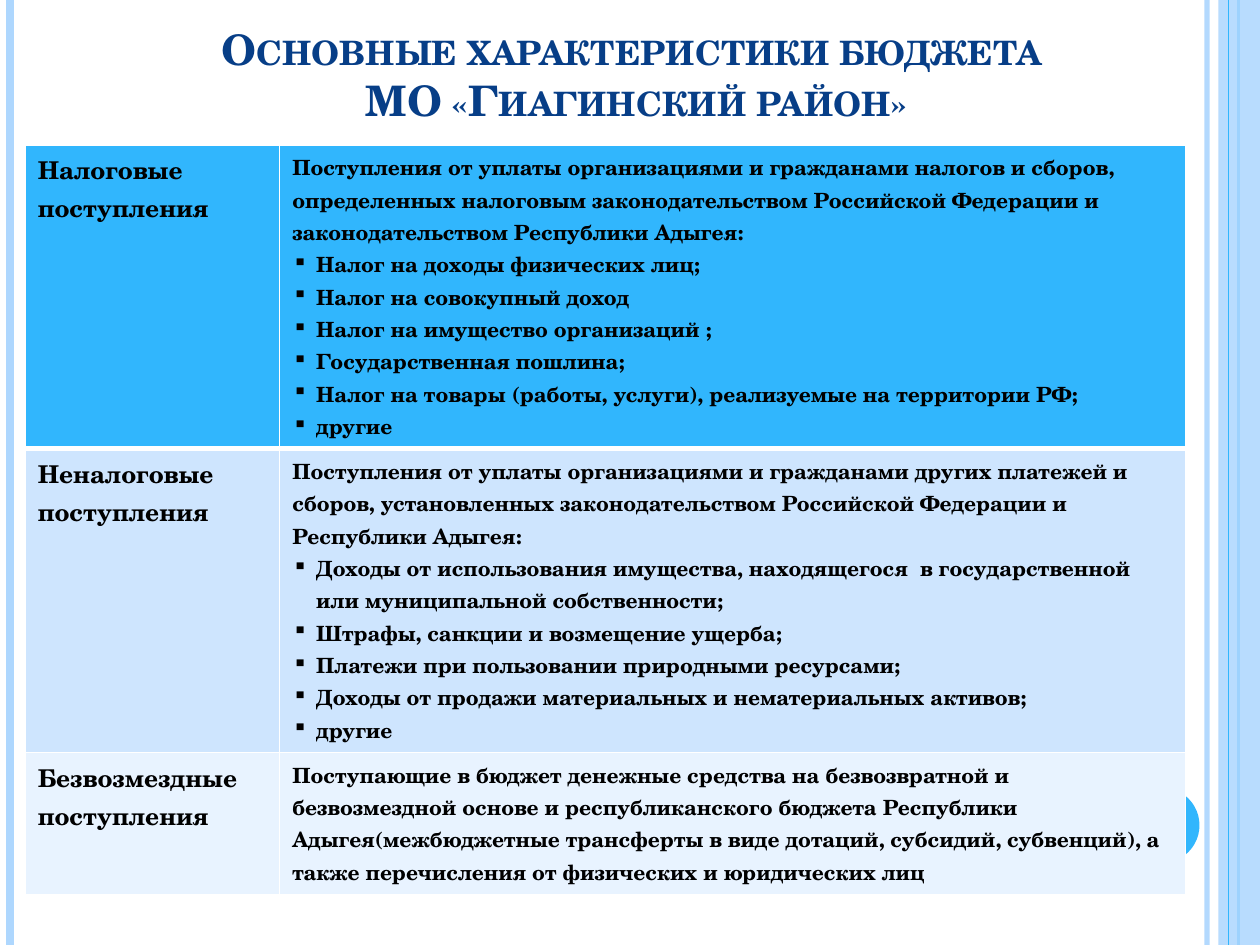
import dataclasses

import lxml.etree
import pptx
import pptx.dml.color
import pptx.enum.shapes
import pptx.enum.text
import pptx.oxml.ns
import pptx.util

Inches = pptx.util.Inches
qn = pptx.oxml.ns.qn


@dataclasses.dataclass(frozen=True)
class Theme:
    font: str = "TeX Gyre Schola"
    title_size: int = 24
    label_size: int = 14
    body_size: int = 12
    title: str = "073E87"
    text: str = "000000"
    border: str = "FFFFFF"
    stripe: str = "AED7FE"
    accent: str = "31B6FD"
    middle_row: str = "CEE5FE"
    last_row: str = "E8F3FF"


def rgb(value):
    return pptx.dml.color.RGBColor.from_string(value)


def set_opacity(properties, percent):
    for colour in properties.iter(qn("a:srgbClr")):
        lxml.etree.SubElement(colour, qn("a:alpha"), val=str(percent * 1000))


class SlideBuilder:
    def __init__(self, slide, theme):
        self.slide = slide
        self.theme = theme

    def vertical_line(self, x, height, colour, width, opacity=100):
        line = self.slide.shapes.add_connector(
            pptx.enum.shapes.MSO_CONNECTOR.STRAIGHT,
            Inches(x), 0, Inches(x), Inches(height))
        line.line.color.rgb = rgb(colour)
        line.line.width = pptx.util.Pt(width)
        properties = line._element.spPr
        if opacity < 100:
            set_opacity(properties, opacity)
        lxml.etree.SubElement(properties, qn("a:effectLst"))

    def shape(self, kind, left, top, width, height, colour, opacity=100):
        shape = self.slide.shapes.add_shape(
            kind, Inches(left), Inches(top), Inches(width), Inches(height))
        shape.shadow.inherit = False
        shape.fill.solid()
        shape.fill.fore_color.rgb = rgb(colour)
        if opacity < 100:
            set_opacity(shape._element.spPr, opacity)
        shape.line.fill.background()

    def run(self, para, text, size, colour):
        span = para.add_run()
        span.text = text
        span.font.name = self.theme.font
        span.font.size = pptx.util.Pt(size)
        span.font.bold = True
        span.font.color.rgb = rgb(colour)
        return span

    def title(self, lines, left, top, width, height):
        box = self.slide.shapes.title
        box.left, box.top = Inches(left), Inches(top)
        box.width, box.height = Inches(width), Inches(height)
        frame = box.text_frame
        frame.word_wrap = True
        frame.auto_size = pptx.enum.text.MSO_AUTO_SIZE.NONE
        frame.vertical_anchor = pptx.enum.text.MSO_ANCHOR.BOTTOM
        para = frame.paragraphs[0]
        para.alignment = pptx.enum.text.PP_ALIGN.CENTER
        for index, line in enumerate(lines):
            if index:
                para.add_line_break()
            span = self.run(para, line, self.theme.title_size, self.theme.title)
            span.font._element.set("cap", "small")

    def bullet(self, para):
        properties = para._p.get_or_add_pPr()
        properties.set("marL", str(Inches(0.19)))
        properties.set("indent", str(-Inches(0.19)))
        lxml.etree.SubElement(properties, qn("a:buChar"), char="▪")

    def borders(self, cell, bottom_width):
        properties = cell._tc.get_or_add_tcPr()
        widths = {"lnL": 1, "lnR": 1, "lnT": 1, "lnB": bottom_width}
        for side, width in widths.items():
            edge = lxml.etree.SubElement(
                properties, qn("a:" + side), w=str(pptx.util.Pt(width)))
            fill = lxml.etree.SubElement(edge, qn("a:solidFill"))
            lxml.etree.SubElement(fill, qn("a:srgbClr"), val=self.theme.border)

    def cell(self, cell, intro, items, size, colour, bottom_width):
        self.borders(cell, bottom_width)
        cell.fill.solid()
        cell.fill.fore_color.rgb = rgb(colour)
        frame = cell.text_frame
        self.run(frame.paragraphs[0], intro, size, self.theme.text)
        for item in items:
            para = frame.add_paragraph()
            self.bullet(para)
            self.run(para, item, size, self.theme.text)

    def table(self, rows, left, top, widths, heights):
        table = self.slide.shapes.add_table(
            len(rows), len(widths), Inches(left), Inches(top),
            Inches(sum(widths)), Inches(sum(heights))).table
        for column, width in zip(table.columns, widths):
            column.width = Inches(width)
        for index, (label, intro, items, colour) in enumerate(rows):
            table.rows[index].height = Inches(heights[index])
            bottom = 3 if index == 0 else 1
            self.cell(table.cell(index, 0), label, [],
                      self.theme.label_size, colour, bottom)
            self.cell(table.cell(index, 1), intro, items,
                      self.theme.body_size, colour, bottom)


def main():
    theme = Theme()
    deck = pptx.Presentation()
    deck.slide_width, deck.slide_height = Inches(10), Inches(7.5)
    page = SlideBuilder(deck.slides.add_slide(deck.slide_layouts[5]), theme)
    shapes = pptx.enum.shapes.MSO_SHAPE

    # Side stripes and corner circle
    page.vertical_line(9.58, 7.5, theme.stripe, 3, 93)
    page.vertical_line(0.08, 7.5, theme.stripe, 4.5)
    page.vertical_line(9.83, 7.5, theme.accent, 1.5)
    page.shape(shapes.RECTANGLE, 9.67, 0, 0.33, 7.5, theme.stripe, 87)
    page.vertical_line(9.75, 7.5, theme.accent, 0.75)
    page.shape(shapes.OVAL, 8.92, 6.25, 0.6, 0.6, theme.accent)

    # Heading
    page.title(["Основные характеристики бюджета", " МО «Гиагинский район»"],
               0.35, 0.21, 9.33, 0.83)

    # Revenue kinds: label, description, examples, row colour
    revenues = [
        ("Налоговые поступления",
         "Поступления от уплаты организациями и гражданами налогов и сборов, "
         "определенных налоговым законодательством Российской Федерации и "
         "законодательством Республики Адыгея:",
         ["Налог на доходы физических лиц;",
          "Налог на совокупный доход",
          "Налог на имущество организаций ;",
          "Государственная пошлина;",
          "Налог на товары (работы, услуги), реализуемые на территории РФ;",
          "другие"],
         theme.accent),
        ("Неналоговые поступления",
         "Поступления от уплаты организациями и гражданами других платежей и "
         "сборов, установленных законодательством Российской Федерации и "
         "Республики Адыгея:",
         ["Доходы от использования имущества, находящегося  в "
          "государственной или муниципальной собственности;",
          "Штрафы, санкции и возмещение ущерба;",
          "Платежи при пользовании природными ресурсами;",
          "Доходы от продажи материальных и нематериальных активов;",
          "другие"],
         theme.middle_row),
        ("Безвозмездные поступления",
         "Поступающие в бюджет денежные средства на безвозвратной и "
         "безвозмездной основе и республиканского бюджета Республики "
         "Адыгея(межбюджетные трансферты в виде дотаций, субсидий, субвенций), "
         "а также перечисления от физических и юридических лиц",
         [], theme.last_row),
    ]
    page.table(revenues, 0.2, 1.15, [2.02, 7.19], [2.41, 2.41, 1.12])

    deck.save("out.pptx")


if __name__ == "__main__":
    main()
